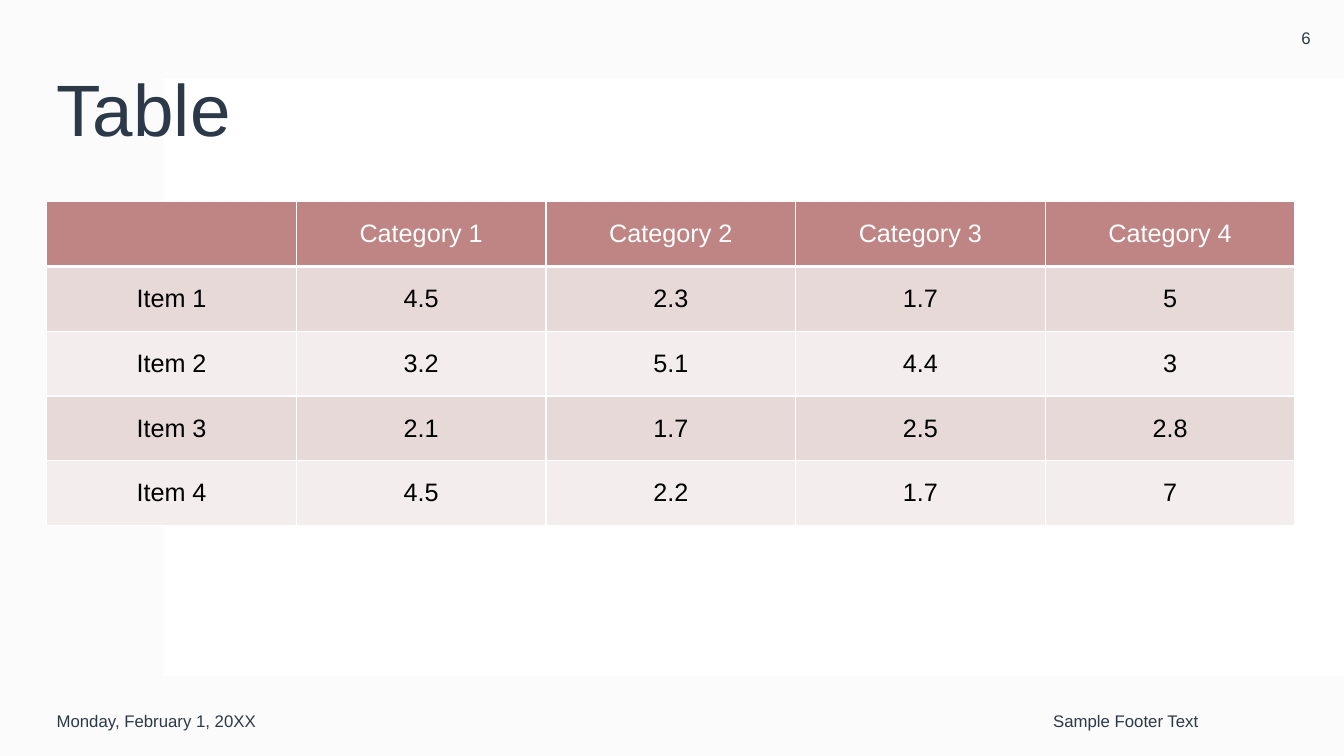
from dataclasses import dataclass

from lxml import etree
from pptx import Presentation
from pptx import util as u
from pptx.dml.color import RGBColor
from pptx.enum import shapes, text
from pptx.oxml import ns

FONT = "Arial"
NAVY, WHITE, BLACK, GRAY = "2C3948", "FFFFFF", "000000", "F4F4F4"
HEADER_FILL, BAND_FILLS = "BF8484", ("E8D9D9", "F4EDED")
LEFT, CENTER, RIGHT = text.PP_ALIGN.LEFT, text.PP_ALIGN.CENTER, text.PP_ALIGN.RIGHT
SLIDE_W, SLIDE_H = 960, 540
COL_W, ROW_H = 178.3, 46.3


@dataclass
class Panel:
    left: float
    top: float
    width: float
    height: float
    color: str
    opacity: int = 100


@dataclass
class Label:
    text: str
    left: float
    top: float
    width: float
    height: float
    size: float = 12
    align: text.PP_ALIGN = LEFT
    spacing: float = 1.0


PANELS = [
    Panel(0, 0, SLIDE_W, SLIDE_H, GRAY, opacity=35),
    Panel(116.5, 56, SLIDE_W - 116.5, 427, WHITE),
]
LABELS = [
    Label("Table", 33.4, 28.8, 830, 104.4, size=52, spacing=0.9),
    Label("Monday, February 1, 20XX", 33.4, 489.6, 216, 50.4),
    Label("Sample Footer Text", 296.6, 489.6, 566.6, 50.4, align=RIGHT),
    Label("6", 905.8, 0, 54, 54, align=CENTER),
]
ROWS = [
    ("", "Category 1", "Category 2", "Category 3", "Category 4"),
    ("Item 1", "4.5", "2.3", "1.7", "5"),
    ("Item 2", "3.2", "5.1", "4.4", "3"),
    ("Item 3", "2.1", "1.7", "2.5", "2.8"),
    ("Item 4", "4.5", "2.2", "1.7", "7"),
]


def rgb(color: str) -> RGBColor:
    return RGBColor.from_string(color)


def style_paragraph(p, size: float, color: str, align: text.PP_ALIGN) -> None:
    p.alignment = align
    p.font.name = FONT
    p.font.size = u.Pt(size)
    p.font.color.rgb = rgb(color)


def add_panel(s, panel: Panel) -> None:
    sp = s.shapes.add_shape(
        shapes.MSO_SHAPE.RECTANGLE,
        u.Pt(panel.left), u.Pt(panel.top), u.Pt(panel.width), u.Pt(panel.height),
    )
    sp.shadow.inherit = False
    sp.line.fill.background()
    sp.fill.solid()
    sp.fill.fore_color.rgb = rgb(panel.color)
    if panel.opacity < 100:
        clr = sp.fill._xPr.find(".//" + ns.qn("a:srgbClr"))
        etree.SubElement(clr, ns.qn("a:alpha"), val=str(panel.opacity * 1000))


def add_label(s, label: Label) -> None:
    sp = s.shapes.add_textbox(
        u.Pt(label.left), u.Pt(label.top), u.Pt(label.width), u.Pt(label.height)
    )
    tf = sp.text_frame
    tf.word_wrap = True
    tf.vertical_anchor = text.MSO_ANCHOR.MIDDLE
    p = tf.paragraphs[0]
    p.text = label.text
    p.line_spacing = label.spacing
    style_paragraph(p, label.size, NAVY, label.align)


def set_borders(cell, bottom: float) -> None:
    """Draw white borders, 1 pt wide except for the bottom one."""
    tc_pr = cell._tc.get_or_add_tcPr()
    widths = {"lnL": 1, "lnR": 1, "lnT": 1, "lnB": bottom}
    for i, (side, width) in enumerate(widths.items()):
        ln = etree.Element(ns.qn(f"a:{side}"), w=str(u.Pt(width)))
        fill = etree.SubElement(ln, ns.qn("a:solidFill"))
        etree.SubElement(fill, ns.qn("a:srgbClr"), val=WHITE)
        tc_pr.insert(i, ln)


def add_data_table(s, left: float, top: float) -> None:
    n_rows, n_cols = len(ROWS), len(ROWS[0])
    table = s.shapes.add_table(
        n_rows, n_cols,
        u.Pt(left), u.Pt(top), u.Pt(n_cols * COL_W), u.Pt(n_rows * ROW_H),
    ).table
    for col in table.columns:
        col.width = u.Pt(COL_W)
    for i, values in enumerate(ROWS):
        table.rows[i].height = u.Pt(ROW_H)
        is_header = i == 0
        for j, value in enumerate(values):
            cell = table.cell(i, j)
            cell.vertical_anchor = text.MSO_ANCHOR.MIDDLE
            cell.fill.solid()
            cell.fill.fore_color.rgb = rgb(HEADER_FILL if is_header else BAND_FILLS[(i - 1) % 2])
            set_borders(cell, bottom=3 if is_header else 1)
            p = cell.text_frame.paragraphs[0]
            p.text = value
            style_paragraph(p, 18, WHITE if is_header else BLACK, CENTER)


def main() -> None:
    prs = Presentation()
    prs.slide_width, prs.slide_height = u.Pt(SLIDE_W), u.Pt(SLIDE_H)
    s = prs.slides.add_slide(prs.slide_layouts[6])
    for panel in PANELS:
        add_panel(s, panel)
    for label in LABELS:
        add_label(s, label)
    add_data_table(s, 33.4, 144)
    prs.save("out.pptx")


if __name__ == "__main__":
    main()
